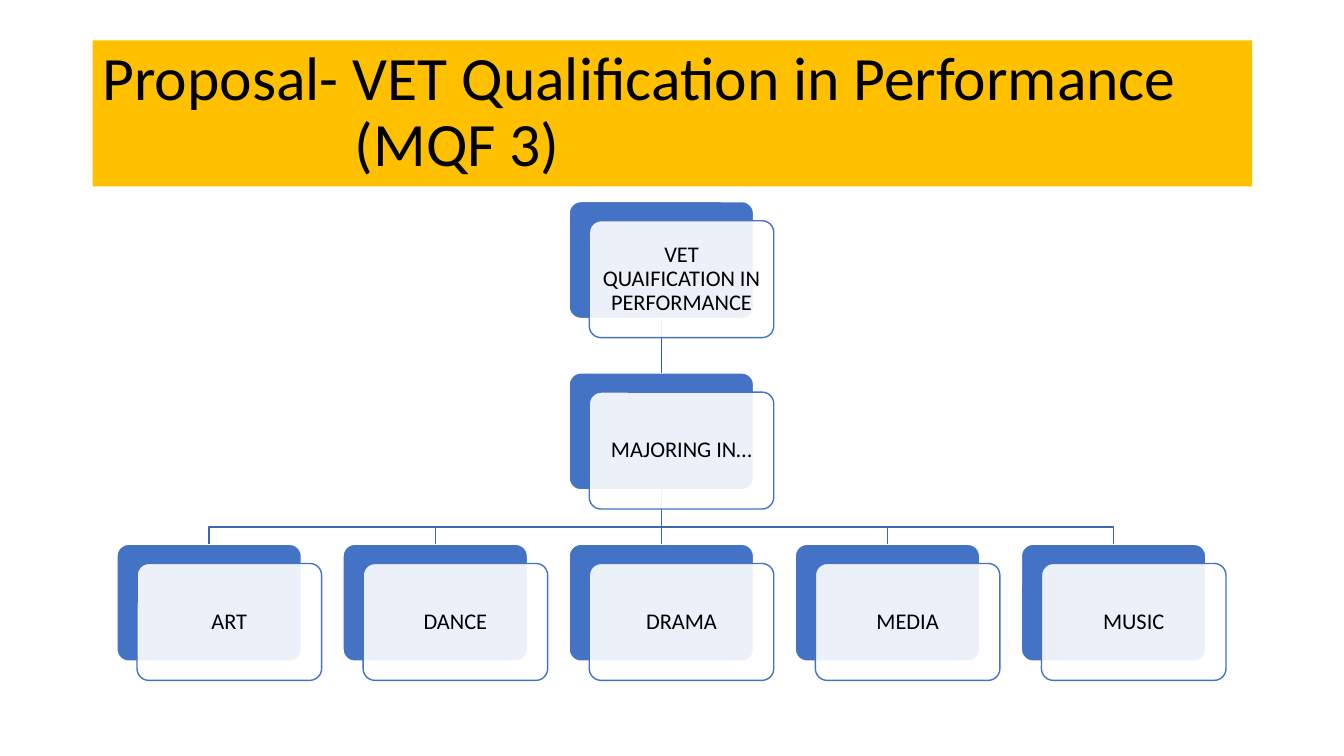
from dataclasses import dataclass

from lxml import etree
from pptx import Presentation, util as u
from pptx.dml.color import RGBColor
from pptx.enum import shapes, text
from pptx.oxml.ns import qn


@dataclass(frozen=True)
class Theme:
    font: str = "Calibri"
    title_size: int = 44
    label_size: int = 16
    banner: str = "FFC000"
    plate: str = "4472C4"
    white: str = "FFFFFF"
    ink: str = "000000"
    root_link: str = "365B9D"
    branch_link: str = "3E67B2"
    line_width: float = 1
    line_spacing: float = 0.9
    card_opacity: int = 90


@dataclass(frozen=True)
class Grid:
    left: float = 1.16
    top: float = 2.0
    column: float = 2.2425
    row: float = 1.7
    box_width: float = 1.83
    box_height: float = 1.16
    card_dx: float = 0.2
    card_dy: float = 0.19
    bend: float = 0.17  # gap between a branch bar and the row below it


@dataclass(frozen=True)
class Node:
    label: str
    column: int
    row: int

    @property
    def x(self) -> float:
        return GRID.left + self.column * GRID.column

    @property
    def y(self) -> float:
        return GRID.top + self.row * GRID.row


THEME = Theme()
GRID = Grid()
ROOT = Node("VET QUAIFICATION IN PERFORMANCE", 2, 0)
MAJOR = Node("MAJORING IN…", 2, 1)
SUBJECTS = [Node(label, column, 2) for column, label in
            enumerate(("ART", "DANCE", "DRAMA", "MEDIA", "MUSIC"))]
NODES = [ROOT, MAJOR, *SUBJECTS]


def color(value: str) -> RGBColor:
    return RGBColor.from_string(value)


def set_line(sp, value: str) -> None:
    sp.line.color.rgb = color(value)
    sp.line.width = u.Pt(THEME.line_width)


def format_text(sp, size: int, align) -> None:
    tf = sp.text_frame
    tf.word_wrap = True
    tf.vertical_anchor = text.MSO_ANCHOR.MIDDLE
    for p in tf.paragraphs:
        p.alignment = align
        p.line_spacing = THEME.line_spacing
        for r in p.runs:
            r.font.name = THEME.font
            r.font.size = u.Pt(size)
            r.font.color.rgb = color(THEME.ink)


def add_title(slide) -> None:
    sp = slide.shapes.add_shape(shapes.MSO_SHAPE.RECTANGLE, u.Inches(0.92),
                                u.Inches(0.4), u.Inches(11.5), u.Inches(1.45))
    sp.shadow.inherit = False
    sp.fill.solid()
    sp.fill.fore_color.rgb = color(THEME.banner)
    sp.line.fill.background()
    sp.text_frame.text = "Proposal- VET Qualification in Performance\n(MQF 3)"
    format_text(sp, THEME.title_size, text.PP_ALIGN.LEFT)
    level = sp.text_frame.paragraphs[1]._p.get_or_add_pPr()
    level.set("marL", str(u.Inches(2.5)))


def add_box(slide, x: float, y: float, fill: str, line: str):
    sp = slide.shapes.add_shape(shapes.MSO_SHAPE.ROUNDED_RECTANGLE, u.Inches(x), u.Inches(y),
                                u.Inches(GRID.box_width), u.Inches(GRID.box_height))
    sp.adjustments[0] = 0.1
    sp.shadow.inherit = False
    sp.fill.solid()
    sp.fill.fore_color.rgb = color(fill)
    set_line(sp, line)
    return sp


def add_card(slide, node: Node) -> None:
    """Add the translucent labelled box in front of a node's plate."""
    sp = add_box(slide, node.x + GRID.card_dx, node.y + GRID.card_dy, THEME.white, THEME.plate)
    rgb = sp.fill._xPr.find(qn("a:solidFill")).find(qn("a:srgbClr"))
    etree.SubElement(rgb, qn("a:alpha")).set("val", str(THEME.card_opacity * 1000))
    tf = sp.text_frame
    tf.margin_left = tf.margin_right = tf.margin_top = tf.margin_bottom = u.Inches(0.1)
    tf.text = node.label
    format_text(sp, THEME.label_size, text.PP_ALIGN.CENTER)


def add_straight_link(slide, parent, child, line: str) -> None:
    link = slide.shapes.add_connector(shapes.MSO_CONNECTOR.STRAIGHT, 0, 0, 0, 0)
    link.begin_connect(parent, 2)
    link.end_connect(child, 0)
    set_line(link, line)
    etree.SubElement(link._element.spPr, qn("a:effectLst"))


def add_elbow_link(slide, parent: Node, child: Node, line: str) -> None:
    start_x, end_x = (node.x + GRID.box_width / 2 for node in (parent, child))
    start_y, bend_y = parent.y + GRID.box_height, child.y - GRID.bend
    outline = slide.shapes.build_freeform(u.Inches(start_x), u.Inches(start_y))
    outline.add_line_segments([(u.Inches(x), u.Inches(y)) for x, y in
                               ((start_x, bend_y), (end_x, bend_y), (end_x, child.y))],
                              close=False)
    sp = outline.convert_to_shape()
    sp.shadow.inherit = False
    sp.fill.background()
    set_line(sp, line)


def main() -> None:
    prs = Presentation()
    prs.slide_width, prs.slide_height = u.Inches(13.33), u.Inches(7.5)
    slide = prs.slides.add_slide(prs.slide_layouts[6])
    add_title(slide)

    plates = {node: add_box(slide, node.x, node.y, THEME.plate, THEME.white) for node in NODES}
    add_straight_link(slide, plates[ROOT], plates[MAJOR], THEME.root_link)
    for subject in SUBJECTS:
        if subject.column == MAJOR.column:
            add_straight_link(slide, plates[MAJOR], plates[subject], THEME.branch_link)
        else:
            add_elbow_link(slide, MAJOR, subject, THEME.branch_link)
    for node in NODES:
        add_card(slide, node)

    prs.save("out.pptx")


if __name__ == "__main__":
    main()
